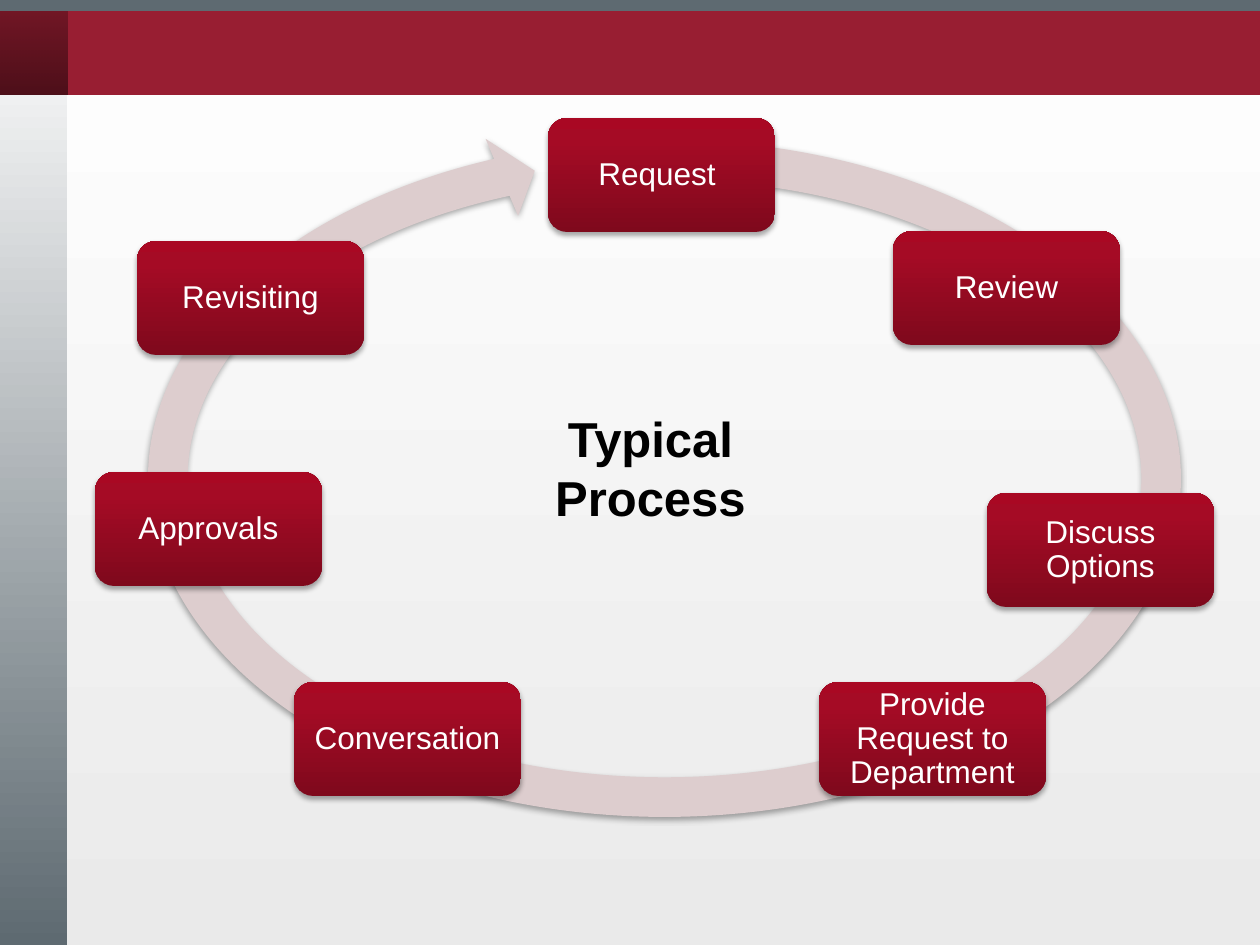
"""Build the slide of the typical request process as a cycle of seven steps."""
from lxml import etree
from pptx import Presentation, util as u
from pptx.dml.color import RGBColor
from pptx.enum import shapes, text
from pptx.oxml.ns import qn

PX = u.Inches(1) // 126
KIND = shapes.MSO_SHAPE
BOX_STOPS = [(0, "7F091C", 100), (80, "A50B25", 100), (100, "A90823", 100)]


def paint(fill, color):
    """Fill with a hex colour, or with (position, colour, opacity) stops from the bottom up."""
    if isinstance(color, str):
        fill.solid()
        fill.fore_color.rgb = RGBColor.from_string(color)
        return
    fill.gradient()
    fill.gradient_angle = 90
    stop_list = fill.gradient_stops[0]._gs.getparent()
    for old in list(stop_list):
        stop_list.remove(old)
    for position, tint, opacity in color:
        stop = etree.SubElement(stop_list, qn("a:gs"), pos=str(position * 1000))
        value = etree.SubElement(stop, qn("a:srgbClr"), val=tint)
        if opacity < 100:
            etree.SubElement(value, qn("a:alpha"), val=str(opacity * 1000))


def add_box(kind, area, words="", color=None, shadow=False, size=18, font_color="FFFFFF",
            bold=False, inset=14, spacing=None):
    box = page.shapes.add_shape(kind, *(edge * PX for edge in area))
    box.line.fill.background()
    box.shadow.inherit = False
    if color:
        paint(box.fill, color)
    else:
        box.fill.background()
    if shadow:
        effects = box._element.spPr.find(qn("a:effectLst"))
        outer = etree.SubElement(effects, qn("a:outerShdw"), blurRad=str(u.Pt(3.1)),
                                 dist=str(u.Pt(1.8)), dir="5400000", rotWithShape="0")
        black = etree.SubElement(outer, qn("a:srgbClr"), val="000000")
        etree.SubElement(black, qn("a:alpha"), val="35000")
    if words:
        frame = box.text_frame
        frame.word_wrap = True
        frame.vertical_anchor = text.MSO_ANCHOR.MIDDLE
        frame.margin_left = frame.margin_right = inset * PX
        frame.margin_top = frame.margin_bottom = inset * PX
        para = frame.paragraphs[0]
        para.alignment = text.PP_ALIGN.CENTER
        para.line_spacing = spacing
        span = para.add_run()
        span.text = words
        span.font.name = "Arial"
        span.font.size = u.Pt(size)
        span.font.bold = bold
        span.font.color.rgb = RGBColor.from_string(font_color)
    return box


deck = Presentation()
deck.slide_width, deck.slide_height = 1260 * PX, 945 * PX
page = deck.slides.add_slide(deck.slide_layouts[6])
paint(page.background.fill, [(0, "EAEAEA", 100), (100, "FFFFFF", 100)])

bands = [
    ((0, 0, 67, 945), [(0, "5E6A71", 100), (100, "FFFFFF", 100)]),
    ((0, 11, 1260, 84), "981E32"),
    ((-3, 11, 70, 84), [(0, "000000", 50), (100, "000000", 25)]),
    ((-3, 0, 1263, 11), "5E6A71"),
]
for area, color in bands:
    add_box(KIND.RECTANGLE, area, color=color)

ring = add_box(KIND.CIRCULAR_ARROW, (126, 118, 1077, 721), color="DDCDCE", shadow=True)
for index, value in enumerate([0.055, 3.307, 144.974, 169.608, 0.058]):
    ring.adjustments[index] = value

steps = [
    ("Request ", 548, 118),
    ("Review", 893, 231),
    ("Discuss Options", 987, 493),
    ("Provide Request to Department", 819, 682),
    ("Conversation ", 294, 682),
    ("Approvals", 95, 472),
    ("Revisiting", 137, 241),
]
for name, left, top in steps:
    add_box(KIND.ROUNDED_RECTANGLE, (left, top, 227, 114), name, BOX_STOPS, shadow=True,
            spacing=0.9)

add_box(KIND.RECTANGLE, (514, 402, 273, 131), "Typical Process", size=28,
        font_color="000000", bold=True, inset=12)

deck.save("out.pptx")
